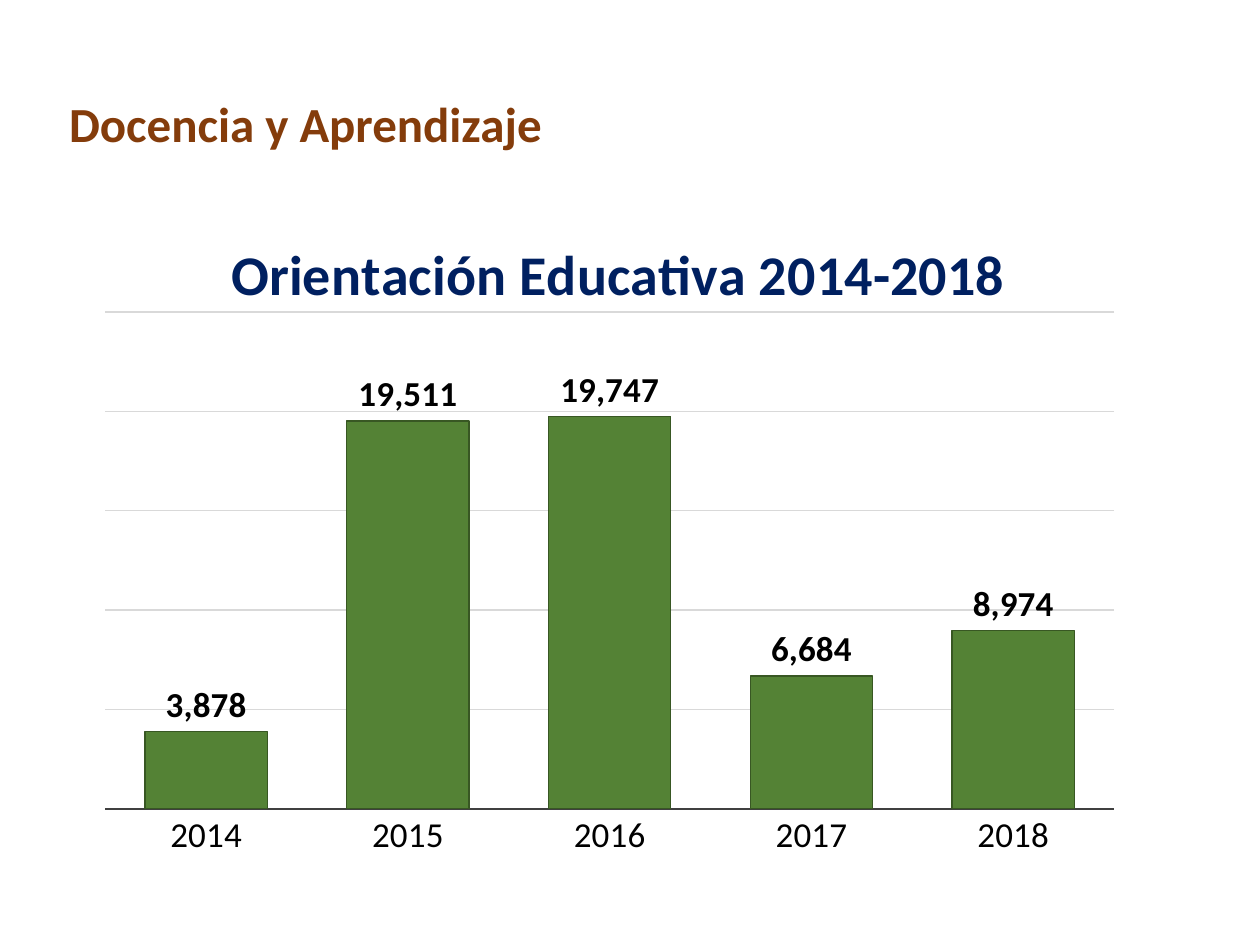
from pptx import Presentation
from pptx.chart.data import CategoryChartData
from pptx.dml.color import RGBColor
from pptx.enum.chart import XL_CHART_TYPE as ChartType, XL_LABEL_POSITION as LabelPosition
from pptx.enum.chart import XL_TICK_MARK as TickMark
from pptx.oxml import parse_xml
from pptx.oxml.ns import nsdecls, qn
from pptx.util import Pt

# Content
HEADING = "Docencia y Aprendizaje"
CHART_TITLE = "Orientación Educativa 2014-2018"
SERVICES = {"2014": 3878, "2015": 19511, "2016": 19747, "2017": 6684, "2018": 8974}
FONT = "Calibri"


def color(hex_code):
    return RGBColor.from_string(hex_code)


def style_font(font, size, hex_code, bold=False):
    font.name, font.size, font.bold = FONT, Pt(size), bold
    font.color.rgb = color(hex_code)


def style_line(line, width, hex_code):
    line.width = Pt(width)
    line.color.rgb = color(hex_code)


def layout(target="", **fractions):
    """Manual chart layout, as fractions of the chart frame."""
    modes = "".join(f'<c:{key}Mode val="edge"/>' for key in "xy")
    values = "".join(f'<c:{key} val="{value}"/>' for key, value in fractions.items())
    return parse_xml(f'<c:layout {nsdecls("c")}><c:manualLayout>{target}{modes}{values}'
                     '</c:manualLayout></c:layout>')


def place(parent, new_layout, index):
    for old in parent.findall(qn("c:layout")):
        parent.remove(old)
    parent.insert(index, new_layout)


deck = Presentation()
deck.slide_width, deck.slide_height = Pt(720), Pt(540)
page = deck.slides.add_slide(deck.slide_layouts[6])

# Heading
box = page.shapes.add_textbox(Pt(32.4), Pt(49.7), Pt(429), Pt(41))
box.text_frame.word_wrap = True
box.text_frame.text = HEADING
style_font(box.text_frame.paragraphs[0].runs[0].font, 28, "843C0B", True)

# Chart and its title
data = CategoryChartData(number_format="#,##0")
data.categories = list(SERVICES)
data.add_series("Series 1", list(SERVICES.values()))
chart = page.shapes.add_chart(ChartType.COLUMN_CLUSTERED, Pt(48.2), Pt(113),
                              Pt(600.5), Pt(383.8), data).chart
style_font(chart.font, 10, "000000")
chart.has_legend = False
chart.has_title = True
title_text = chart.chart_title.text_frame
title_text.text = CHART_TITLE
style_font(title_text.paragraphs[0].runs[0].font, 32, "002060", True)
chart.chart_title.include_in_layout = False
place(chart.chart_title._element, layout(x=0.13, y=0.04), 1)
place(chart._chartSpace.chart.plotArea,
      layout('<c:layoutTarget val="inner"/>', x=0.02, y=0.17, w=0.96, h=0.74), 0)

# Axes
years = chart.category_axis
years.major_tick_mark = years.minor_tick_mark = TickMark.NONE
style_font(years.tick_labels.font, 20, "000000")
style_line(years.format.line, 1.5, "404040")
amounts = chart.value_axis
amounts.visible = False
amounts.minimum_scale, amounts.maximum_scale, amounts.major_unit = 0, 25000, 5000
amounts.has_major_gridlines = True
style_line(amounts.major_gridlines.format.line, 0.75, "D9D9D9")

# Columns and value labels
plot = chart.plots[0]
plot.gap_width = 65
plot.vary_by_categories = False
columns = plot.series[0]
columns.format.fill.solid()
columns.format.fill.fore_color.rgb = color("548235")
style_line(columns.format.line, 0.75, "385723")
labels = columns.data_labels
labels.show_value = True
labels.position = LabelPosition.OUTSIDE_END
labels.number_format, labels.number_format_is_linked = "#,##0", False
style_font(labels.font, 20, "000000", True)

deck.save("out.pptx")
